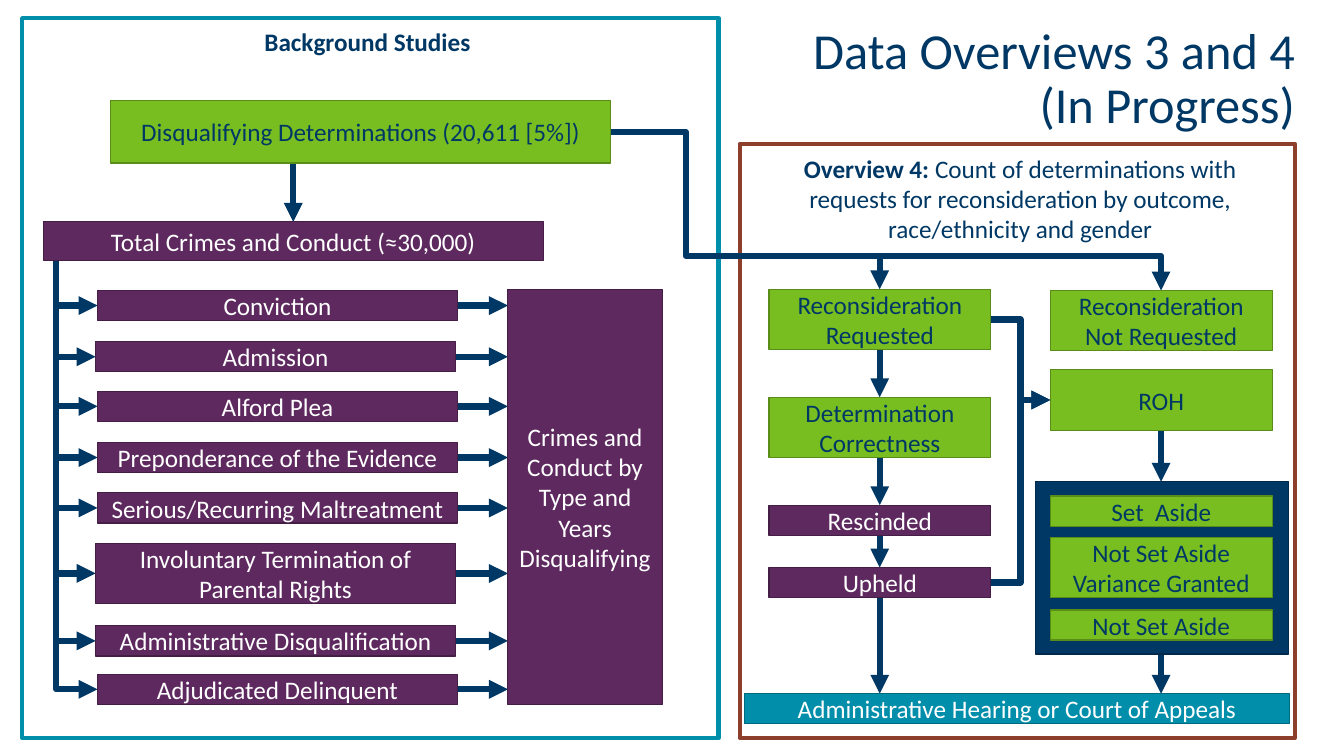
from typing import Any, NamedTuple

from lxml import etree
from pptx import Presentation
from pptx.dml.color import RGBColor
from pptx.enum.shapes import MSO_CONNECTOR, MSO_SHAPE
from pptx.enum.text import MSO_ANCHOR, MSO_AUTO_SIZE, PP_ALIGN
from pptx.oxml.ns import qn
from pptx.util import Cm, Pt

RECT = MSO_SHAPE.RECTANGLE
LINE = MSO_CONNECTOR.STRAIGHT
ELBOW = MSO_CONNECTOR.ELBOW
MIDDLE = MSO_ANCHOR.MIDDLE
TOP = MSO_ANCHOR.TOP
GROW = MSO_AUTO_SIZE.SHAPE_TO_FIT_TEXT
CENTER = PP_ALIGN.CENTER
RIGHT = PP_ALIGN.RIGHT

FONT = "Calibri"
INK = {
    "white": "FFFFFF", "navy": "003865", "night": "00294B",
    "green": "78BE21", "moss": "598D18", "plum": "5D295F",
    "grape": "451E46", "teal": "008EAA", "sea": "00697E", "rust": "8D3F2B",
}


class Style(NamedTuple):
    fill: str
    edge: str
    text: str = "white"
    width: float = 0.85


GREEN = Style("green", "moss", "navy")
PLUM = Style("plum", "grape")
TEAL = Style("teal", "sea")
NAVY = Style("navy", "night")


class Box(NamedTuple):
    text: str
    left: float
    top: float
    width: float
    height: float
    style: Style


class Crime(NamedTuple):
    text: str
    left: float
    top: float
    start: float
    height: float = 0.76


class Link(NamedTuple):
    """A connector; turn "across" or "down" names the first leg of one bend."""
    x1: float
    y1: float
    x2: float
    y2: float
    kind: Any = LINE
    turn: str = ""
    arrow: bool = True


ONE, TWO = 0.76, 1.52     # box heights for one and two lines
COL = 5.59                # width of the boxes in Overview 4
ASK, NOT = 19.38, 26.47   # left edges of its two columns
ASK_MID, NOT_MID = 22.17, 29.26
BUS, TRUNK = 6.45, 1.42   # shared line across, shared line down
CRIME_W = 9.07
TYPE_L = 12.8
COURT = 17.48

FRAMES = [
    Box("", 18.64, 3.63, 14, 14.96, Style("white", "rust", width=3)),
    Box("", 0.56, 0.46, 17.55, 18.14, Style("white", "teal", width=3)),
]

CRIMES = [
    Crime("Conviction", 2.46, 7.32, 6.17),
    Crime("Admission", 2.41, 8.61, 6.17),
    Crime("Alford Plea", 2.46, 9.86, 6.02),
    Crime("Preponderance of the Evidence", 2.46, 11.15, 5.92),
    Crime("Serious/Recurring Maltreatment", 2.46, 12.42, 5.79),
    Crime("Involuntary Termination of Parental Rights", 2.41, 13.69, 6.22, TWO),
    Crime("Administrative Disqualification", 2.41, 15.77, 9.17),
    Crime("Adjudicated Delinquent", 2.46, 16.99, 10.36),
]

BOXES = [
    Box("Disqualifying Determinations (20,611 [5%])", 2.79, 2.54, 12.6, 1.57, GREEN),
    Box("Total Crimes and Conduct (≈30,000)", 1.09, 5.59, 12.6, 0.97, PLUM),
    Box("Crimes and Conduct by Type and Years Disqualifying",
        TYPE_L, 7.29, 3.89, 10.46, PLUM),
    Box("Reconsideration Requested", ASK, 7.29, COL, TWO, GREEN),
    Box("Determination Correctness", ASK, 10.01, COL, TWO, GREEN),
    Box("Rescinded", ASK, 12.73, COL, ONE, PLUM),
    Box("Upheld", ASK, 14.3, COL, ONE, PLUM),
    Box("Reconsideration Not Requested", NOT, 7.32, COL, TWO, GREEN),
    Box("ROH", NOT, 9.32, COL, TWO, GREEN),
    Box("Administrative Hearing or Court of Appeals", 18.77, COURT, 13.72, ONE, TEAL),
]

RESULTS = [
    Box("", 26.09, 12.14, 6.38, 4.34, NAVY),
    Box("Set  Aside", NOT, 12.5, COL, ONE, GREEN),
    Box("Not Set Aside Variance Granted", NOT, 13.54, COL, TWO, GREEN),
    Box("Not Set Aside", NOT, 15.37, COL, ONE, GREEN),
]

LINKS = [
    Link(15.39, 3.33, 19.18, BUS, ELBOW, arrow=False),
    Link(19.02, BUS, 27.58, BUS, arrow=False),
    Link(19.18, BUS, ASK_MID, 7.29, ELBOW, "across"),
    Link(26.82, BUS, NOT_MID, 7.32, ELBOW, "across"),
    Link(7.39, 4.14, 7.39, 5.59),
    Link(ASK_MID, 8.81, ASK_MID, 10.01),
    Link(ASK_MID, 11.53, ASK_MID, 12.73),
    Link(ASK_MID, 13.49, ASK_MID, 14.3),
    Link(ASK_MID, 15.06, ASK_MID, COURT),
    Link(24.97, 8.05, NOT, 10.08, ELBOW),
    Link(24.97, 14.68, NOT, 10.08, ELBOW),
    Link(NOT_MID, 10.85, NOT_MID, 12.14),
    Link(NOT_MID, 16.46, NOT_MID, COURT),
]


def ink(name: str) -> RGBColor:
    return RGBColor.from_string(INK[name])


def add_run(para: Any, text: str, color: str, size: float = 18,
            bold: bool = False) -> None:
    run = para.add_run()
    run.text = text
    run.font.name, run.font.size, run.font.bold = FONT, Pt(size), bold
    run.font.color.rgb = ink(color)


def draw_box(shapes: Any, box: Box) -> None:
    shape = shapes.add_shape(RECT, *map(Cm, box[1:5]))
    shape.shadow.inherit = False
    shape.fill.solid()
    shape.fill.fore_color.rgb = ink(box.style.fill)
    shape.line.color.rgb = ink(box.style.edge)
    shape.line.width = Pt(box.style.width)
    if box.text:
        frame = shape.text_frame
        frame.word_wrap, frame.vertical_anchor = True, MIDDLE
        para = frame.paragraphs[0]
        para.alignment = CENTER
        add_run(para, box.text, box.style.text)


def draw_link(shapes: Any, link: Link) -> None:
    x1, y1, x2, y2 = link[:4]
    if link.turn == "down":  # the bend is laid on its side, then turned
        mid_x, mid_y = (x1 + x2) / 2, (y1 + y2) / 2
        half_w, half_h = (y2 - y1) / 2, (x2 - x1) / 2
        x1, y1, x2, y2 = (mid_x - half_w, mid_y - half_h,
                          mid_x + half_w, mid_y + half_h)
    wire = shapes.add_connector(link.kind, Cm(x1), Cm(y1), Cm(x2), Cm(y2))
    wire.line.color.rgb = ink("navy")
    wire.line.width = Pt(4.5)
    props = wire._element.spPr
    if link.turn:
        props.find(qn("a:prstGeom")).set("prst", "bentConnector2")
    if link.turn == "down":
        form = props.find(qn("a:xfrm"))
        form.set("rot", "16200000")
        form.set("flipH", "1")
    if link.arrow:
        etree.SubElement(props.find(qn("a:ln")), qn("a:tailEnd"), type="triangle")
    etree.SubElement(props, qn("a:effectLst"))


def add_text(shapes: Any, left: float, top: float, width: float,
             height: float, align: Any = CENTER, anchor: Any = TOP) -> Any:
    frame = shapes.add_textbox(Cm(left), Cm(top), Cm(width), Cm(height)).text_frame
    frame.word_wrap, frame.vertical_anchor = True, anchor
    frame.paragraphs[0].alignment = align
    return frame


def draw_heads(shapes: Any) -> None:
    title = add_text(shapes, 18.64, 0, 14, 4.04, RIGHT, MIDDLE)
    title.margin_left = title.margin_right = Cm(0)
    para = title.paragraphs[0]
    para.line_spacing = 0.9
    add_run(para, "Data Overviews 3 and 4", "navy", 36)
    para.add_line_break()
    add_run(para, "(In Progress)", "navy", 36)

    studies = add_text(shapes, 0.56, 0.53, 17.55, 1.02)
    add_run(studies.paragraphs[0], "Background Studies ", "navy", bold=True)
    count = add_text(shapes, 18.85, 3.73, 13.72, 2.54)
    add_run(count.paragraphs[0], "Overview 4: ", "navy", bold=True)
    add_run(count.paragraphs[0], "Count of determinations with requests for "
            "reconsideration by outcome, race/ethnicity and gender", "navy")
    studies.auto_size = count.auto_size = GROW


def main() -> None:
    deck = Presentation()
    deck.slide_width, deck.slide_height = Cm(33.87), Cm(19.05)
    shapes = deck.slides.add_slide(deck.slide_layouts[6]).shapes
    for frame in FRAMES:
        draw_box(shapes, frame)
    draw_heads(shapes)
    for crime in CRIMES:
        mid = crime.top + crime.height / 2
        draw_link(shapes, Link(TRUNK, crime.start, crime.left, mid, ELBOW, "down"))
        draw_link(shapes, Link(crime.left + CRIME_W, mid, TYPE_L, mid))
        draw_box(shapes, Box(crime.text, crime.left, crime.top, CRIME_W,
                             crime.height, PLUM))
    for link in LINKS:
        draw_link(shapes, link)
    for box in BOXES:
        draw_box(shapes, box)
    group = shapes.add_group_shape()
    for box in RESULTS:
        draw_box(group.shapes, box)
    deck.save("out.pptx")


if __name__ == "__main__":
    main()
